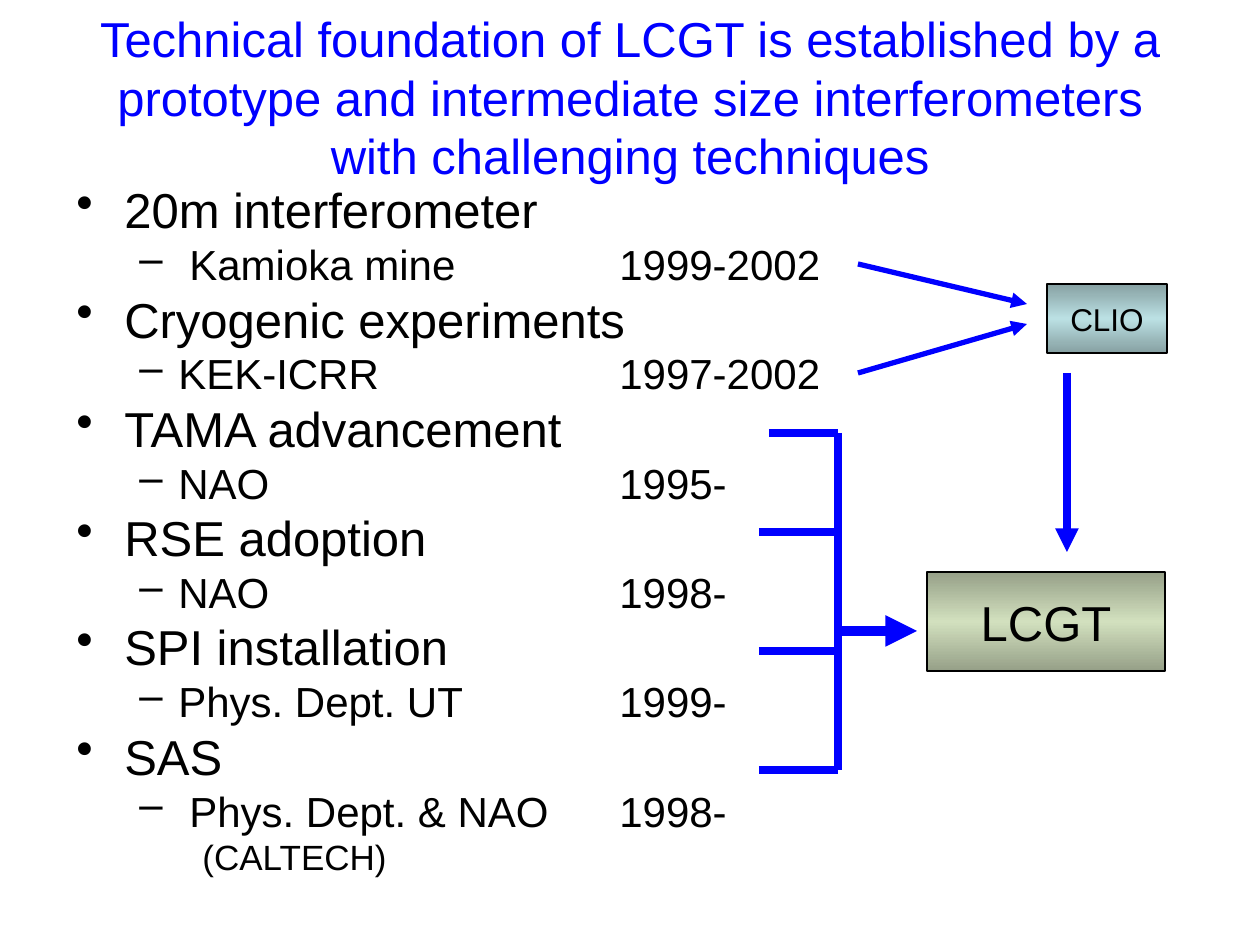
from dataclasses import dataclass

from lxml.etree import SubElement
from pptx import Presentation
from pptx.dml.color import RGBColor
from pptx.enum.shapes import MSO_CONNECTOR, MSO_SHAPE
from pptx.enum.text import MSO_ANCHOR, PP_ALIGN
from pptx.oxml.ns import qn
from pptx.util import Pt

PX = 914400 // 126


@dataclass(frozen=True)
class Theme:
    font: str = "Arial"
    blue: str = "0000FF"
    black: str = "000000"
    teal: tuple = ("86A0A2", "BBE0E3", "86A0A2")
    olive: tuple = ("96A088", "D2E0BE", "96A088")
    heading: int = 28
    detail: int = 24
    note: int = 20
    label: int = 18
    outline: float = 0.75
    thin: float = 3
    thick: float = 4.5
    heavy: float = 6


THEME = Theme()

TITLE = ("Technical foundation of LCGT is established by a prototype and "
         "intermediate size interferometers with challenging techniques")
PROJECTS = [
    ("20m interferometer", "Kamioka mine", "1999-2002", 113),
    ("Cryogenic experiments", "KEK-ICRR", "1997-2002", 102),
    ("TAMA advancement", "NAO", "1995-", 102),
    ("RSE adoption", "NAO", "1998-", 102),
    ("SPI installation", "Phys. Dept. UT", "1999-", 102),
    ("SAS", "Phys. Dept. & NAO", "1998-", 113),
]
NOTE = "(CALTECH)"

HEADING_INDENT = 48
BULLET_LEFT = 63
NOTE_LEFT = 126
DATE_TAB = 543

BOXES = [
    ("CLIO", (1047, 284, 120, 69), THEME.teal, THEME.label),
    ("LCGT", (927, 572, 238, 99), THEME.olive, THEME.heading),
]
SPINE = 838
RUNGS = [(769, 433), (759, 532), (759, 651), (759, 770)]
ARROWS = [
    ((858, 264), (1027, 304), THEME.thin),
    ((858, 373), (1027, 324), THEME.thin),
    ((1067, 373), (1067, 552), THEME.thick),
    ((SPINE, 631), (917, 631), THEME.heavy),
]


def px(*values):
    return [value * PX for value in values]


def set_font(paragraph, size, color):
    paragraph.font.name = THEME.font
    paragraph.font.size = Pt(size)
    paragraph.font.color.rgb = RGBColor.from_string(color)


def add_item(frame, text, level, size, left, indent=0, bullet=None, tab=None):
    first = not frame.text
    paragraph = frame.paragraphs[0] if first else frame.add_paragraph()
    paragraph.text = text
    paragraph.level = level
    paragraph.line_spacing = 0.8
    paragraph.space_before = Pt(0 if first else round(size * 0.24, 1))
    properties = paragraph._p.get_or_add_pPr()
    properties.set("marL", str(left * PX))
    properties.set("indent", str(indent * PX))
    if bullet:
        SubElement(properties, qn("a:buChar"), char=bullet)
    if tab:
        tabs = SubElement(properties, qn("a:tabLst"))
        SubElement(tabs, qn("a:tab"), pos=str(tab * PX), algn="l")
    set_font(paragraph, size, THEME.black)


def add_projects(slide):
    frame = slide.shapes.add_textbox(*px(64, 185, 1134, 760)).text_frame
    frame.word_wrap = True
    for heading, place, dates, left in PROJECTS:
        add_item(frame, heading, 0, THEME.heading, HEADING_INDENT, -HEADING_INDENT, "•")
        add_item(frame, f"{place}\t{dates}", 1, THEME.detail, left,
                 BULLET_LEFT - left, "–", DATE_TAB)
    add_item(frame, NOTE, 2, THEME.note, NOTE_LEFT)


def add_box(slide, text, bounds, colors, size):
    shape = slide.shapes.add_shape(MSO_SHAPE.RECTANGLE, *px(*bounds))
    shape.shadow.inherit = False
    shape.fill.gradient()
    shape.fill.gradient_angle = 270
    stops = shape._element.spPr.find(qn("a:gradFill")).find(qn("a:gsLst"))
    stops.clear()
    for position, color in zip((0, 50000, 100000), colors):
        stop = SubElement(stops, qn("a:gs"), pos=str(position))
        SubElement(stop, qn("a:srgbClr"), val=color)
    shape.line.color.rgb = RGBColor.from_string(THEME.black)
    shape.line.width = Pt(THEME.outline)
    frame = shape.text_frame
    frame.word_wrap = False
    frame.vertical_anchor = MSO_ANCHOR.MIDDLE
    paragraph = frame.paragraphs[0]
    paragraph.text = text
    paragraph.alignment = PP_ALIGN.CENTER
    set_font(paragraph, size, THEME.black)


def add_line(slide, start, end, width, arrow=False):
    connector = slide.shapes.add_connector(MSO_CONNECTOR.STRAIGHT, *px(*start, *end))
    connector.line.color.rgb = RGBColor.from_string(THEME.blue)
    connector.line.width = Pt(width)
    if arrow:
        SubElement(connector.line._get_or_add_ln(), qn("a:tailEnd"), type="triangle")
    SubElement(connector._element.spPr, qn("a:effectLst"))


def add_title(slide):
    title = slide.shapes.title
    title.left, title.top, title.width, title.height = px(63, 38, 1134, 117)
    frame = title.text_frame
    frame.vertical_anchor = MSO_ANCHOR.MIDDLE
    paragraph = frame.paragraphs[0]
    paragraph.text = TITLE
    paragraph.alignment = PP_ALIGN.CENTER
    set_font(paragraph, THEME.heading, THEME.blue)


def main():
    presentation = Presentation()
    presentation.slide_width, presentation.slide_height = px(1260, 945)
    slide = presentation.slides.add_slide(presentation.slide_layouts[5])
    add_title(slide)
    add_projects(slide)
    for box in BOXES:
        add_box(slide, *box)
    for arrow in ARROWS:
        add_line(slide, *arrow, arrow=True)
    add_line(slide, (SPINE, RUNGS[0][1]), (SPINE, RUNGS[-1][1]), THEME.thick)
    for left, top in RUNGS:
        add_line(slide, (left, top), (SPINE, top), THEME.thick)
    presentation.save("out.pptx")


if __name__ == "__main__":
    main()
